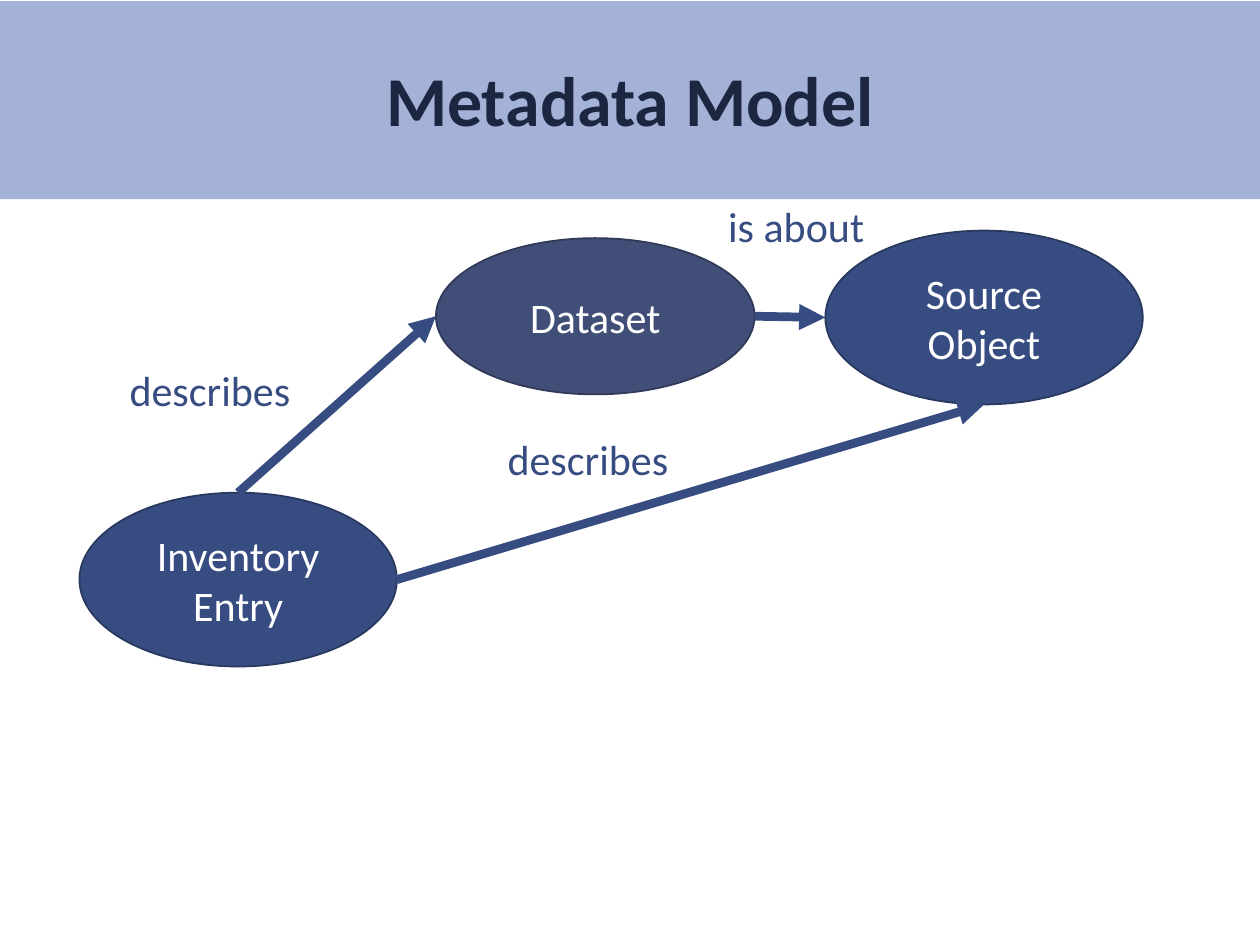
from pptx import Presentation
from pptx.dml.color import RGBColor
from pptx.enum.shapes import MSO_CONNECTOR as CONN, MSO_SHAPE as SHAPE
from pptx.enum.text import MSO_ANCHOR as ANCHOR, PP_ALIGN as ALIGN
from pptx.oxml.ns import qn
from pptx.util import Inches, Pt
from lxml import etree

BAND = RGBColor(0xA4, 0xB2, 0xD8)
INK = RGBColor(0x1C, 0x26, 0x40)
BLUE = RGBColor(0x37, 0x4C, 0x81)
BLUE_EDGE = RGBColor(0x29, 0x38, 0x5F)
SLATE = RGBColor(0x41, 0x4E, 0x77)
SLATE_EDGE = RGBColor(0x30, 0x3A, 0x58)
WHITE = RGBColor(0xFF, 0xFF, 0xFF)


class Diagram:
    font = "Calibri"
    text_size = Pt(24)

    def __init__(self, slide):
        self.slide = slide

    def set_text(self, tf, text, color, align=ALIGN.LEFT, **formats):
        tf.text = text
        p = tf.paragraphs[0]
        p.alignment = align
        values = {"name": self.font, "size": self.text_size, **formats}
        for r in p.runs:
            for name, value in values.items():
                setattr(r.font, name, value)
            r.font.color.rgb = color
        return p

    def title(self, text):
        sp = self.slide.shapes.title
        box = {"left": 0, "top": Inches(0.01), "width": Inches(10), "height": Inches(1.57)}
        for name, value in box.items():
            setattr(sp, name, value)
        sp.fill.solid()
        sp.fill.fore_color.rgb = BAND
        tf = sp.text_frame
        frame = {"margin_left": 0, "margin_top": Inches(0.08), "margin_right": 0,
                 "margin_bottom": 0, "vertical_anchor": ANCHOR.MIDDLE, "word_wrap": False}
        for name, value in frame.items():
            setattr(tf, name, value)
        p = self.set_text(tf, text, INK, ALIGN.CENTER, size=Pt(40), bold=True)
        p.line_spacing = 0.85

    def node(self, text, left, top, width=2.52, height=1.38, fill=BLUE, edge=BLUE_EDGE):
        sp = self.slide.shapes.add_shape(
            SHAPE.OVAL, Inches(left), Inches(top), Inches(width), Inches(height))
        sp.shadow.inherit = False
        sp.fill.solid()
        sp.fill.fore_color.rgb = fill
        sp.line.color.rgb = edge
        sp.line.width = Pt(1)
        sp.text_frame.vertical_anchor = ANCHOR.MIDDLE
        self.set_text(sp.text_frame, text, WHITE, ALIGN.CENTER)
        return sp

    def label(self, text, left, top):
        sp = self.slide.shapes.add_textbox(
            Inches(left), Inches(top), Inches(1.75), Inches(0.5))
        sp.text_frame.word_wrap = True
        self.set_text(sp.text_frame, text, BLUE)

    def arrow(self, start, end):
        cxn = self.slide.shapes.add_connector(CONN.STRAIGHT, *start, *end)
        cxn.line.color.rgb = BLUE
        cxn.line.width = Pt(5)
        sp_pr = cxn._element.spPr
        etree.SubElement(sp_pr.find(qn("a:ln")), qn("a:tailEnd"), type="triangle")
        etree.SubElement(sp_pr, qn("a:effectLst"))


def edge_point(sp, across, down):
    """Point at the given fractions of the shape's width and height."""
    return sp.left + int(sp.width * across), sp.top + int(sp.height * down)


def main():
    prs = Presentation()
    prs.slide_width, prs.slide_height = Inches(10), Inches(7.5)
    diagram = Diagram(prs.slides.add_slide(prs.slide_layouts[5]))
    diagram.title("Metadata Model")

    entry = diagram.node("Inventory Entry", 0.63, 3.91)
    dataset = diagram.node("Dataset", 3.46, 1.89, 2.53, 1.24, SLATE, SLATE_EDGE)
    source = diagram.node("Source\vObject", 6.55, 1.83)

    diagram.label("describes", 0.93, 2.84)
    diagram.label("is about", 5.68, 1.54)
    diagram.label("describes", 3.93, 3.39)

    diagram.arrow(edge_point(entry, 0.5, 0), edge_point(dataset, 0, 0.5))
    diagram.arrow(edge_point(dataset, 1, 0.5), edge_point(source, 0, 0.5))
    diagram.arrow(edge_point(entry, 1, 0.5), edge_point(source, 0.5, 1))

    prs.save("out.pptx")


if __name__ == "__main__":
    main()
